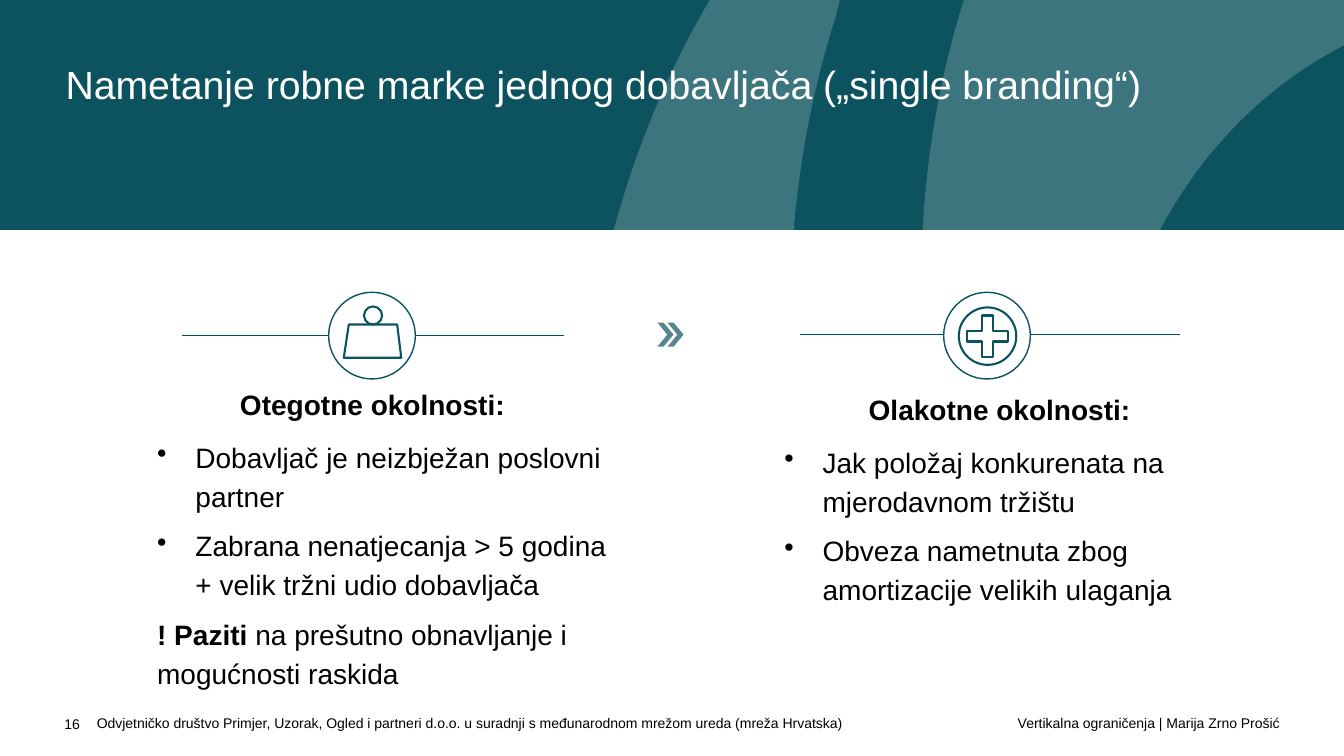
from lxml.etree import SubElement
from pptx import Presentation
from pptx.dml.color import RGBColor
from pptx.enum.shapes import MSO_CONNECTOR, MSO_SHAPE
from pptx.enum.text import MSO_ANCHOR, PP_ALIGN
from pptx.oxml.ns import qn
from pptx.util import Pt

PX = 9144  # 100 px to the inch
TEAL = RGBColor(0x0D, 0x53, 0x5F)
LINE_TEAL = RGBColor(0x00, 0x51, 0x57)
CHEVRON_TEAL = RGBColor(0x56, 0x87, 0x8F)
WHITE = RGBColor(0xFF, 0xFF, 0xFF)
BLACK = RGBColor(0x00, 0x00, 0x00)

deck = Presentation()
deck.slide_width, deck.slide_height = 1333 * PX, 750 * PX
page = deck.slides.add_slide(deck.slide_layouts[6])
shapes = page.shapes


def paint(shape, fill=None, line=None, weight=1):
    shape.shadow.inherit = False
    if fill is None:
        shape.fill.background()
    else:
        shape.fill.solid()
        shape.fill.fore_color.rgb = fill
    if line is None:
        shape.line.fill.background()
    else:
        shape.line.color.rgb = line
        shape.line.width = Pt(weight)


def add_text(at, lines, size, color=BLACK, bold=False, align=PP_ALIGN.LEFT,
             anchor=MSO_ANCHOR.TOP, inset=0):
    """Add a wrapped text box, one paragraph per line, and return its paragraphs."""
    frame = shapes.add_textbox(*(n * PX for n in at)).text_frame
    frame.word_wrap = True
    frame.vertical_anchor = anchor
    frame.margin_left = frame.margin_right = inset * PX
    frame.margin_top = frame.margin_bottom = inset // 2 * PX
    frame.text = "\n".join(lines)
    for para in frame.paragraphs:
        para.alignment = align
        para.font.name = "Arial"
        para.font.size = Pt(size)
        para.font.bold = bold
        para.font.color.rgb = color
    return frame.paragraphs


# Header band with two translucent sweeps; each edge is a Bézier curve or a corner
band = shapes.add_shape(MSO_SHAPE.RECTANGLE, 0, 0, 1333 * PX, 228 * PX)
paint(band, TEAL)
sweeps = [
    [[(1149, 231), (1191, 150), (1255, 85), (1333, 45)], [(1333, 0)],
     [(956, 0), (933, 73), (919, 150), (915, 231)]],
    [[(787, 231), (793, 157), (807, 85), (829, 16)], [(833, 0)],
     [(704, 0), (662, 71), (630, 149), (608, 231)]],
]
STEPS = 24
for edges in sweeps:
    points = []
    for edge in edges:
        if len(edge) == 1:
            points.append((edge[0][0] * PX, edge[0][1] * PX))
            continue
        for step in range(STEPS + 1):
            t = step / STEPS
            weights = ((1 - t) ** 3, 3 * t * (1 - t) ** 2, 3 * t * t * (1 - t), t ** 3)
            points.append(tuple(
                round(PX * sum(w * p[axis] for w, p in zip(weights, edge)))
                for axis in (0, 1)))
    builder = shapes.build_freeform(*points[0])
    builder.add_line_segments(points[1:], close=True)
    sweep = builder.convert_to_shape()
    paint(sweep, WHITE)
    tint = sweep.fill._xPr.find(".//" + qn("a:srgbClr"))
    SubElement(tint, qn("a:alpha")).set("val", "20000")

add_text((65, 65, 1205, 98), ["Nametanje robne marke jednog dobavljača („single branding“)"],
         28, WHITE)[0].line_spacing = 0.9

# Rules with icon rings
for rule_left, rule_right, rule_y, ring_left in [(181, 559, 333, 326), (793, 1170, 332, 936)]:
    rule = shapes.add_connector(MSO_CONNECTOR.STRAIGHT, rule_left * PX, rule_y * PX,
                                rule_right * PX, rule_y * PX)
    rule.line.color.rgb = LINE_TEAL
    rule.line.width = Pt(1)
    SubElement(rule._element.spPr, qn("a:effectLst"))
    ring = shapes.add_shape(MSO_SHAPE.OVAL, ring_left * PX, 290 * PX, 86 * PX, 86 * PX)
    paint(ring, WHITE, TEAL)

for left in (652, 662):
    chevron = shapes.add_shape(MSO_SHAPE.CHEVRON, left * PX, 320 * PX, 16 * PX, 24 * PX)
    chevron.adjustments[0] = 0.62
    paint(chevron, CHEVRON_TEAL)

# Weight and plus icons
builder = shapes.build_freeform(346, 322, scale=PX)
builder.add_line_segments([(394, 322), (398, 355), (341, 355)], close=True)
weight_body = builder.convert_to_shape()
weight_handle = shapes.add_shape(MSO_SHAPE.OVAL, 361 * PX, 304 * PX, 18 * PX, 18 * PX)
plus_ring = shapes.add_shape(MSO_SHAPE.OVAL, 951 * PX, 305 * PX, 57 * PX, 57 * PX)
plus = shapes.add_shape(MSO_SHAPE.CROSS, 959 * PX, 313 * PX, 41 * PX, 41 * PX)
plus.adjustments[0] = 0.37
for icon_part in (weight_body, weight_handle, plus_ring, plus):
    paint(icon_part, line=TEAL, weight=1.5)

# Two columns: heading and bullets
columns = [
    (181, 384, "Otegotne okolnosti:", (96, 427, 519, 310),
     ["Dobavljač je neizbježan poslovni partner",
      "Zabrana nenatjecanja > 5 godina + velik tržni udio dobavljača"]),
    (803, 389, "Olakotne okolnosti:", (718, 432, 519, 173),
     ["Jak položaj konkurenata na mjerodavnom tržištu",
      "Obveza nametnuta zbog amortizacije velikih ulaganja"]),
]
WARNING = ("! Paziti ", "na prešutno obnavljanje i mogućnosti raskida")
for left, top, heading, body_at, bullets in columns:
    add_text((left, top, 377, 34), [heading], 20, bold=True, align=PP_ALIGN.CENTER)
    warned = heading.startswith("Otegotne")
    paras = add_text(body_at, bullets + [""] * warned, 20, inset=10)
    for para in paras:
        para.line_spacing = 1.15
        para.space_after = Pt(8)
        props = para._p.get_or_add_pPr()
        props.set("marL", str(50 * PX))
    for para in paras[:len(bullets)]:
        props = para._p.pPr
        props.set("marL", str(88 * PX))
        props.set("indent", str(-38 * PX))
        bullet = props.makeelement(qn("a:buChar"), {"char": "•"})
        props.find(qn("a:defRPr")).addprevious(bullet)
    if warned:
        for text, bold in zip(WARNING, (True, False)):
            span = paras[-1].add_run()
            span.text = text
            span.font.bold = bold

# Footer
add_text((915, 685, 354, 65), ["Vertikalna ograničenja | Marija Zrno Prošić"], 10,
         align=PP_ALIGN.RIGHT, anchor=MSO_ANCHOR.MIDDLE)
add_text((96, 685, 818, 65),
         ["Odvjetničko društvo Primjer, Uzorak, Ogled i partneri d.o.o. "
          "u suradnji s međunarodnom mrežom ureda (mreža Hrvatska)"],
         10, anchor=MSO_ANCHOR.MIDDLE)
add_text((54, 705, 42, 65), ["16"], 10, inset=10)

deck.save("out.pptx")
